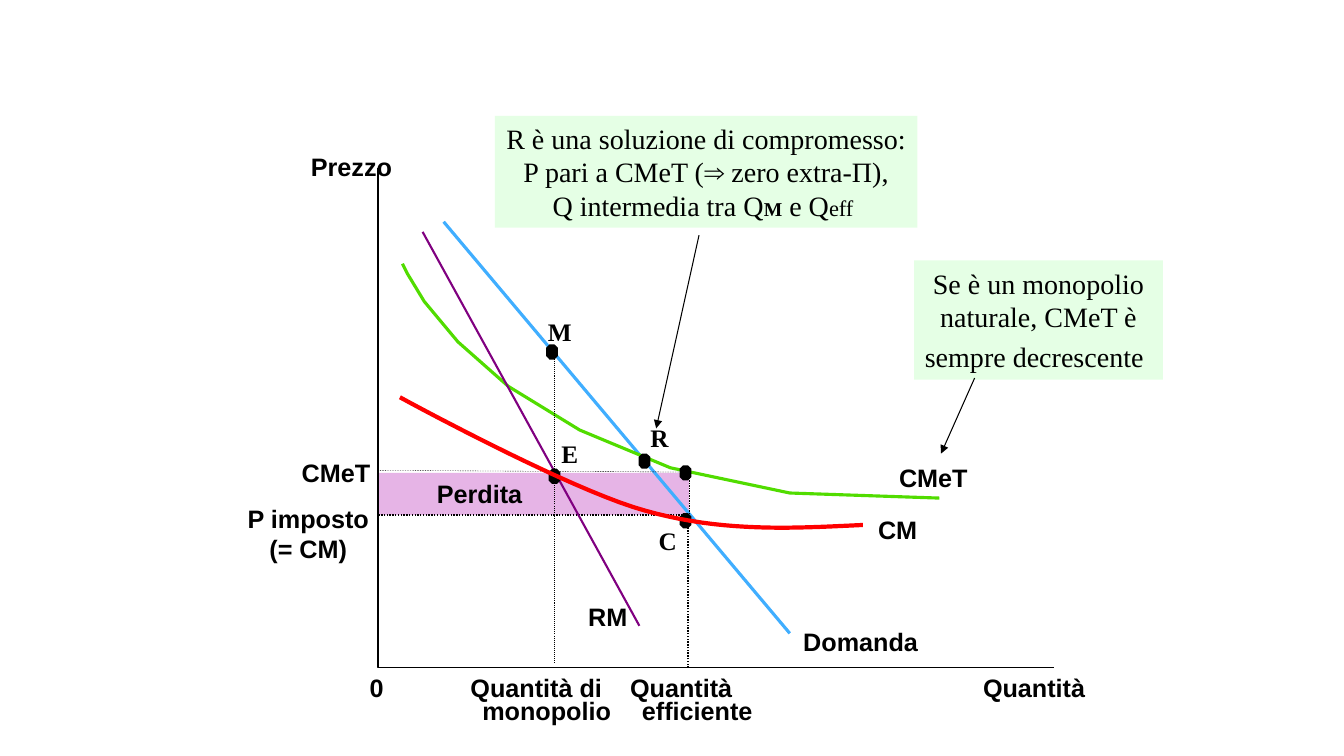
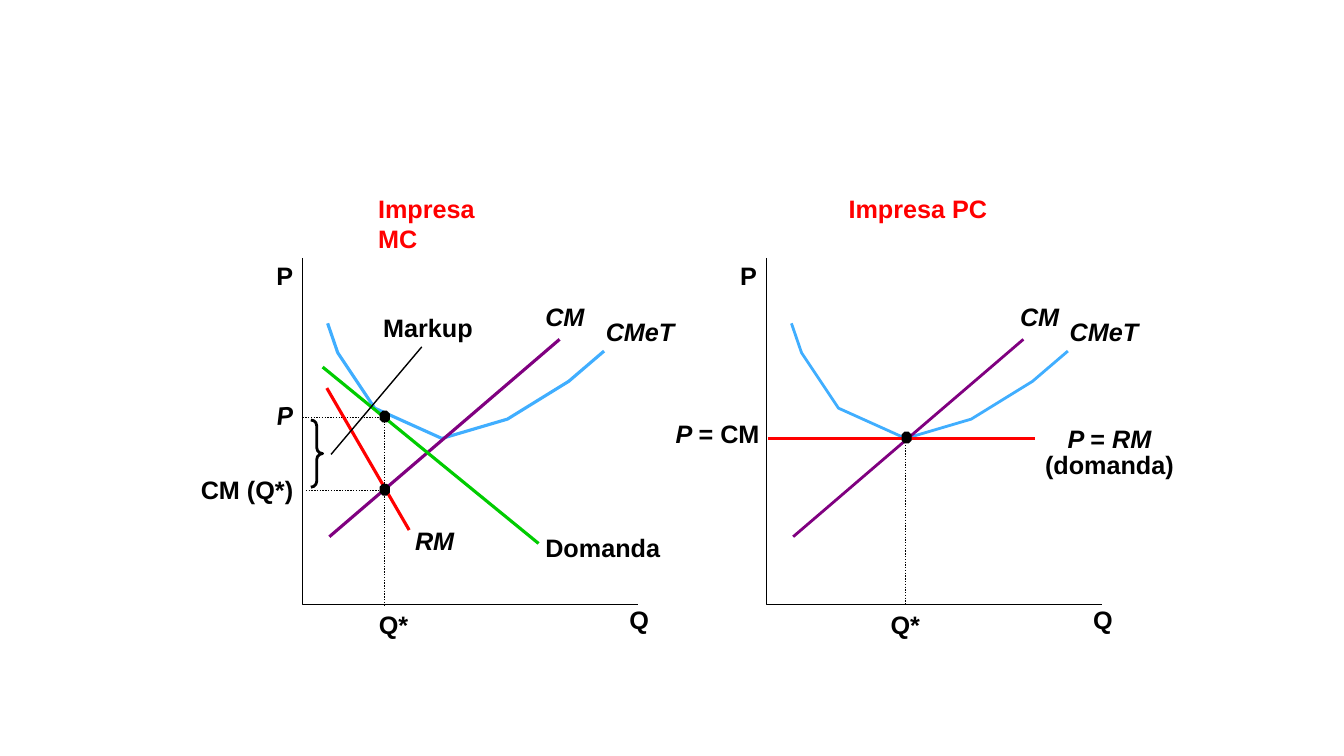
from lxml import etree
from pptx import Presentation
from pptx import util as u
from pptx.dml.color import RGBColor
from pptx.enum import dml, shapes, text
from pptx.oxml.ns import qn

BLACK = RGBColor(0x00, 0x00, 0x00)
RED = RGBColor(0xFF, 0x00, 0x00)
BLUE = RGBColor(0x40, 0xAE, 0xFF)
LIME = RGBColor(0x51, 0xDC, 0x00)
GREEN = RGBColor(0x00, 0xCC, 0x00)
PURPLE = RGBColor(0x80, 0x00, 0x80)
LILAC = RGBColor(0xE6, 0xB4, 0xE6)
MINT = RGBColor(0xCC, 0xFF, 0xCC)

SANS, SERIF = "Arial", "Times New Roman"
LEFT, CENTER, RIGHT = text.PP_ALIGN.LEFT, text.PP_ALIGN.CENTER, text.PP_ALIGN.RIGHT
DOTTED, DASHED = dml.MSO_LINE.ROUND_DOT, dml.MSO_LINE.DASH

deck = Presentation()
deck.slide_width, deck.slide_height = u.Inches(13.33), u.Inches(7.5)
CELL = deck.slide_height / 90  # the slide is a grid of 160 columns by 90 rows
LINE_ROWS = 3.6


def write(slide, words, left, top, width, height=LINE_ROWS, align=LEFT,
          font=SANS, size=18, bold=True, italic=False):
    """Add a label; a new line starts a paragraph and | starts a run."""
    label = slide.shapes.add_textbox(*(round(n * CELL) for n in (left, top, width, height)))
    frame = label.text_frame
    frame.margin_left = frame.margin_right = frame.margin_top = frame.margin_bottom = 0
    frame.word_wrap = False
    frame.text = words.replace("|", "")
    for paragraph, line in zip(frame.paragraphs, words.split("\n")):
        paragraph.alignment = align
        first, *others = line.split("|")
        paragraph.runs[0].text = first
        for part in others:
            paragraph.add_run().text = part
        for run in paragraph.runs:
            run.font.name, run.font.size = font, u.Pt(size)
            run.font.bold, run.font.italic = bold, italic
            run.font.color.rgb = BLACK
    return label


def draw(slide, points, color=BLACK, width=1, dash=None, arrow=False):
    """Join grid points: a connector for two, an open outline for more."""
    start, *rest = [(round(x * CELL), round(y * CELL)) for x, y in points]
    if len(rest) == 1:
        stroke = slide.shapes.add_connector(shapes.MSO_CONNECTOR.STRAIGHT, *start, *rest[0])
        etree.SubElement(stroke._element.spPr, qn("a:effectLst"))
    else:
        outline = slide.shapes.build_freeform(*start, scale=1.0)
        outline.add_line_segments(rest, close=False)
        stroke = outline.convert_to_shape()
        stroke.fill.background()
        stroke.shadow.inherit = False
    stroke.line.color.rgb, stroke.line.width = color, u.Pt(width)
    if dash:
        stroke.line.dash_style = dash
    if arrow:
        etree.SubElement(stroke.line._get_or_add_ln(), qn("a:tailEnd"), type="triangle")


monopoly, competition = [deck.slides.add_slide(deck.slide_layouts[6]) for _ in range(2)]

# Natural monopoly: loss area, axes and curves
loss = monopoly.shapes.add_shape(
    shapes.MSO_SHAPE.RECTANGLE, *(round(n * CELL) for n in (45, 56.3, 37, 5)))
loss.shadow.inherit = False
loss.fill.solid()
loss.fill.fore_color.rgb = LILAC
loss.line.fill.background()

average_cost = [(47.9, 31.4), (48.5, 32.6), (50.5, 35.9), (54.5, 40.7), (60.5, 46),
                (69, 51.2), (79.8, 55.7), (94, 58.7), (111.8, 59.3)]
for points, color, width, dash in [
    ([(52.8, 26.4), (94, 75.4)], BLUE, 2.25, None),
    (average_cost, LIME, 2.25, None),
    ([(45, 20), (45, 79.5), (125.4, 79.5)], BLACK, 1, None),
    ([(81.9, 79.5), (81.9, 61.3), (45, 61.3)], BLACK, 1, DOTTED),
    ([(50.3, 27.6), (76.1, 74.5)], PURPLE, 1.5, None),
    ([(66, 42), (66, 79)], BLACK, 0.75, DOTTED),
    ([(45.2, 56), (81.1, 56.2)], BLACK, 0.25, DASHED),
    ([(82, 56.3), (82, 61.2)], BLACK, 0.25, DASHED),
]:
    draw(monopoly, points, color, width, dash)

for words, left, top, width in [
    ("Prezzo", 37, 18, 9.7), ("Quantità", 117, 80, 12.2), ("0", 44, 80, 1.7),
    ("Perdita", 52, 57, 10.3), ("Domanda", 95.6, 74.6, 13.8), ("CM", 104.5, 61.2, 4.7),
    ("CMeT", 107, 55, 8.3), ("CMeT", 35.9, 54.5, 8.3), ("RM", 70, 71.6, 4.7),
    ("Quantità di", 56, 80, 15.8), ("monopolio", 57.4, 82.8, 15.5),
    ("Quantità", 75, 80, 12.2), ("efficiente", 76.4, 82.8, 13.3),
]:
    write(monopoly, words, left, top, width)
write(monopoly, "P imposto\n(= CM)", 29.4, 59.9, 14.6, 2 * LINE_ROWS, CENTER)
for letter, left, top in [("M", 65.2, 37.6), ("E", 66.8, 52.2), ("R", 77.4, 50.3), ("C", 78.4, 62.6)]:
    write(monopoly, letter, left, top, 2.8, font=SERIF)

compromise = write(
    monopoly, "R è una soluzione di compromesso:\nP pari a CMeT (⇒ zero extra-Π),\n"
    "Q intermedia tra Q|M| e Q|eff| ", 58.9, 13.8, 50.3, 13.3, CENTER, SERIF, 20, False)
decreasing = write(
    monopoly, "Se è un monopolio\nnaturale, CMeT è\nsempre decrescente| ",
    108.8, 31, 29.6, 14.2, CENTER, SERIF, 20, False)
for callout, last_line_sizes in [(compromise, (20, 14, 20, 16, 18)), (decreasing, (20, 24))]:
    callout.fill.solid()
    callout.fill.fore_color.rgb = MINT
    tint = callout._element.spPr.find(qn("a:solidFill"))[0]
    etree.SubElement(tint, qn("a:alpha"), val="50000")
    callout.text_frame.vertical_anchor = text.MSO_ANCHOR.MIDDLE
    for run, size in zip(callout.text_frame.paragraphs[-1].runs, last_line_sizes):
        run.font.size = u.Pt(size)
compromise.text_frame.paragraphs[-1].runs[1].font.bold = True
draw(monopoly, [(83.2, 28), (78.1, 51)], width=0.75, arrow=True)
draw(monopoly, [(116, 45), (112, 54)], width=0.75, arrow=True)

# Monopolistic and perfect competition: what both panels share
MC, PC = 36, 91.2  # column of each vertical axis
AXIS_ROW = 72
cmet_curve = [(3, 38.5), (4.2, 42), (8.6, 48.6), (16.6, 52.2), (24.4, 49.9), (31.7, 45.4), (35.9, 41.8)]
for axis, title, title_at, cm_at, q_at, stroke_width in [
    (MC, "Impresa MC", 45, 64.9, 45.1, 2.25),
    (PC, "Impresa PC", 101, 121.4, 106, 2),
]:
    draw(competition, [(axis, 30.7), (axis, AXIS_ROW), (axis + 39.9, AXIS_ROW)])
    draw(competition, [(axis + x, y) for x, y in cmet_curve], BLUE, stroke_width)
    draw(competition, [(axis + 30.6, 40.4), (axis + 3.2, 63.9)], PURPLE, stroke_width)
    heading = write(competition, title, title_at, 23, 17)
    heading.text_frame.paragraphs[0].runs[0].font.color.rgb = RED
    write(competition, "P", axis - 3.1, 31, 2)
    write(competition, "Q", axis + 38.9, AXIS_ROW, 2.4)
    write(competition, "Q*", q_at, 72.5, 3.5, align=CENTER)
    write(competition, "CM", cm_at, 35.9, 4.7, italic=True)
    write(competition, "CMeT", axis + 36.1, 37.6, 8.3, italic=True)

# Left panel: demand, marginal revenue and markup
for points, color, width, dash in [
    ([(MC, 49.7), (45.8, 49.7), (45.8, AXIS_ROW)], BLACK, 1, DOTTED),
    ([(36.4, 58.4), (45.7, 58.4)], BLACK, 1, DOTTED),
    ([(38.4, 43.7), (64.1, 64.7)], GREEN, 2.25, None),
    ([(38.9, 46.2), (48.7, 63.1)], RED, 2.25, None),
    ([(50.2, 41.3), (39.4, 54.1)], BLACK, 1, None),
]:
    draw(competition, points, color, width, dash)
markup = competition.shapes.add_shape(
    shapes.MSO_SHAPE.RIGHT_BRACE, *(round(n * CELL) for n in (37, 50, 1.4, 8)))
markup.adjustments[0] = 0.5
markup.shadow.inherit = False
markup.fill.background()
markup.line.color.rgb, markup.line.width = BLACK, u.Pt(2)
write(competition, "Markup", 45.6, 37.2, 10.8)
write(competition, "Domanda", 64.9, 63.4, 13.8)
write(competition, "RM", 49.4, 62.6, 4.7, italic=True)
write(competition, "CM (Q*)", 23.8, 56.5, 11.1, align=RIGHT)
write(competition, "P", 32.9, 47.6, 2, italic=True).rotation = 356

# Right panel: price equals marginal cost and marginal revenue
draw(competition, [(91.4, 52.2), (123.2, 52.2)], RED, 2)
draw(competition, [(107.8, 52.3), (107.8, AXIS_ROW)], dash=DOTTED)
price = write(competition, "P |= CM", 80.3, 49.8, 10.1, align=RIGHT)
demand = write(competition, "P |= |RM\n(domanda)", 124, 51, 16.1, 6.1, CENTER)
demand.text_frame.vertical_anchor = text.MSO_ANCHOR.MIDDLE
for paragraph in demand.text_frame.paragraphs:
    paragraph.line_spacing = 0.85
for label in (price, demand):
    for run in label.text_frame.paragraphs[0].runs[::2]:
        run.font.italic = True

# Equilibrium points of both slides
for slide, width, height, centers in [
    (monopoly, 1.4, 1.8, [(81.6, 62), (81.6, 56.3), (66, 56.7), (65.7, 41.9), (76.7, 54.9)]),
    (competition, 1.2, 1.4, [(45.8, 58.3), (45.8, 49.6), (107.9, 52.1)]),
]:
    for x, y in centers:
        dot = slide.shapes.add_shape(
            shapes.MSO_SHAPE.OCTAGON,
            *(round(n * CELL) for n in (x - width / 2, y - height / 2, width, height)))
        dot.shadow.inherit = False
        dot.fill.solid()
        dot.fill.fore_color.rgb = BLACK
        dot.line.fill.background()

# The marginal cost curve passes over the points: two Bézier arcs, sampled
STEPS = 20
marginal_cost = []
for arc in [
    [(102.7, 62.5), (94.4, 62.9), (86, 63.4), (76.8, 60.8)],
    [(76.8, 60.8), (67.7, 58.3), (47.6, 47.3), (47.6, 47.3)],
]:
    for step in range(STEPS + 1):
        t = step / STEPS
        weights = ((1 - t) ** 3, 3 * t * (1 - t) ** 2, 3 * t ** 2 * (1 - t), t ** 3)
        marginal_cost.append([sum(w * n for w, n in zip(weights, axis)) for axis in zip(*arc)])
draw(monopoly, marginal_cost, RED, 3)

deck.save("out.pptx")
